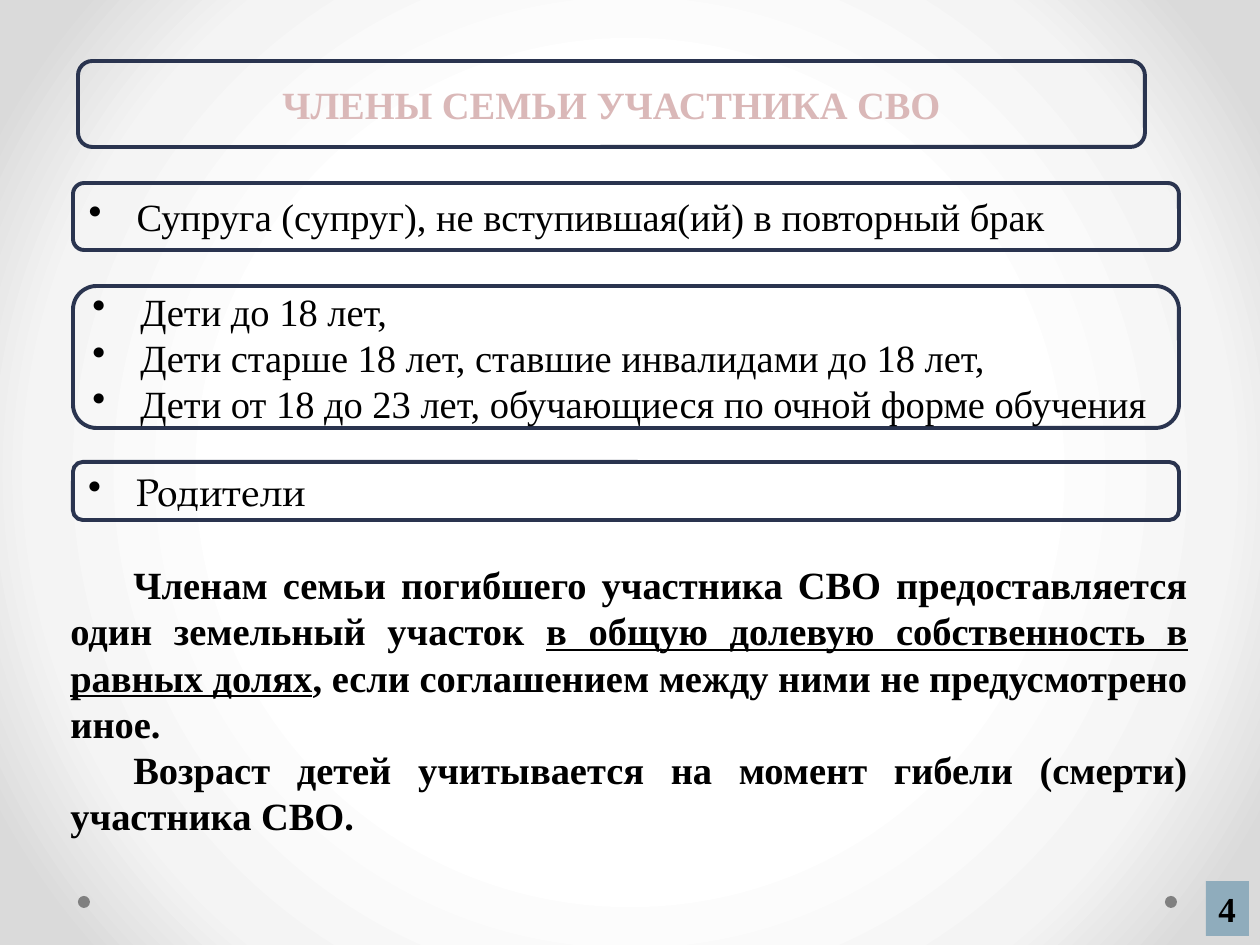
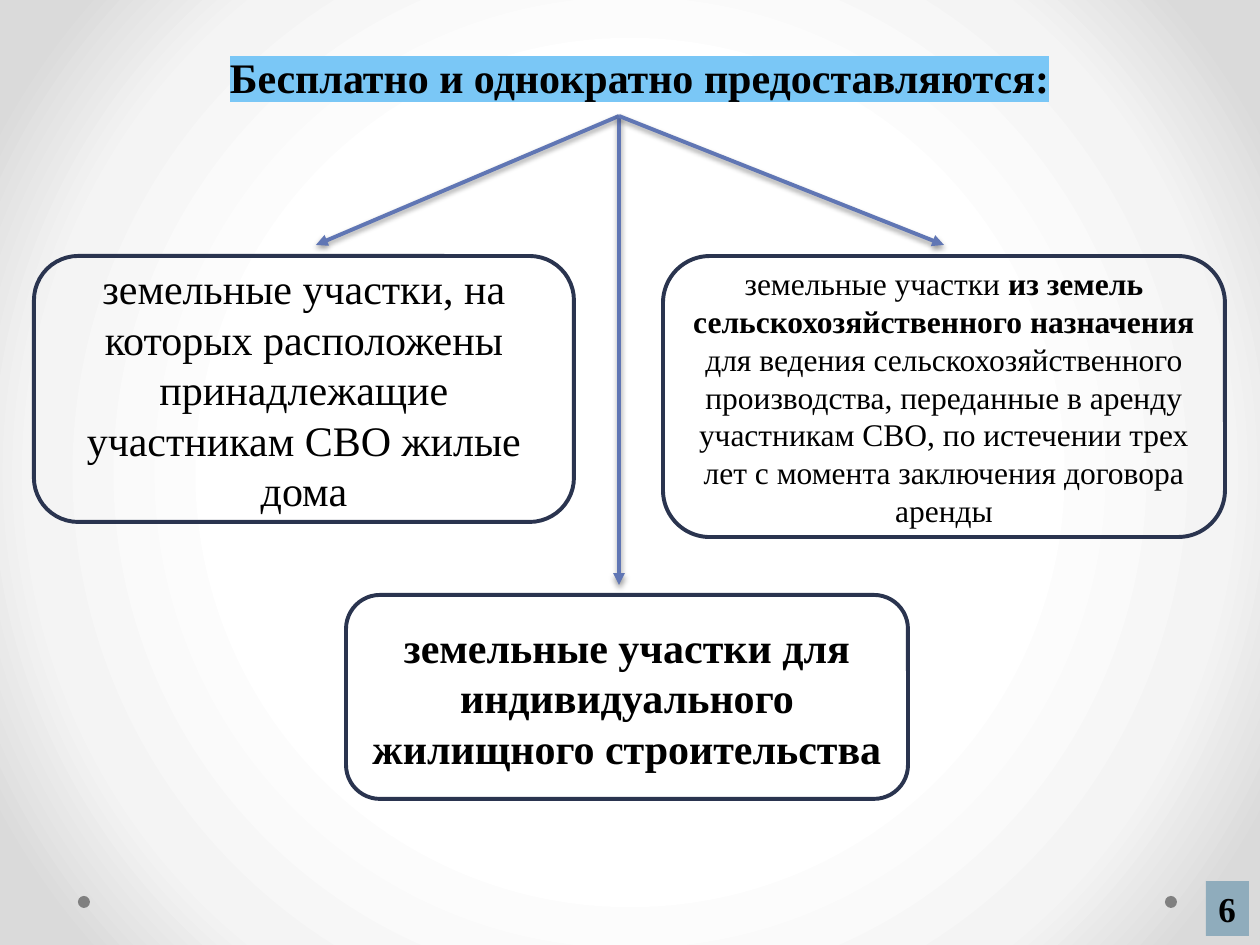
from typing import NamedTuple

from lxml.etree import SubElement
from pptx import Presentation
from pptx.dml.color import RGBColor
from pptx.enum.shapes import MSO_CONNECTOR, MSO_SHAPE
from pptx.enum.text import MSO_ANCHOR, PP_ALIGN
from pptx.oxml.ns import qn
from pptx.util import Pt

SCALE = 914400 / 126  # EMU in one px
COLORS = {
    "ink": "000000", "frame": "2A344F", "rose": "DAB8B8", "sky": "7AC7F6",
    "arrow": "6076B4", "badge": "8FACBC", "dot": "808080",
}
GLOW = ((50, "FFFFFF"), (76, "F4F4F4"), (92, "DADADA"))
SERIF = "Times New Roman"
PAGELLA = "TeX Gyre Pagella"
LEADING = 1.2
HANG = 48


class Run(NamedTuple):
    text: str
    bold: bool = False
    line: bool = False


class Area(NamedTuple):
    left: int
    top: int
    width: int
    height: int


class Card(NamedTuple):
    area: Area
    paras: list[list[Run]]
    size: int = 22
    font: str = SERIF
    color: str = "ink"
    list: bool = False


def emu(px: int) -> int:
    return round(px * SCALE)


def rgb(name: str) -> RGBColor:
    return RGBColor.from_string(COLORS[name])


def node(parent, tag: str, **attrs):
    """Append a DrawingML child element."""
    return SubElement(parent, qn(tag), {k: str(v) for k, v in attrs.items()})


def write(frame, paras: list[list[Run]], *, size: int = 22, font: str = SERIF,
          color: str = "ink", align=PP_ALIGN.LEFT, anchor=MSO_ANCHOR.TOP,
          list: bool = False, indent: int = 0, lead: float = 0,
          mark: str = "", wrap: bool = True) -> None:
    """Fill a text frame with formatted paragraphs."""
    frame.word_wrap = wrap
    frame.vertical_anchor = anchor
    for i, runs in enumerate(paras):
        para = frame.add_paragraph() if i else frame.paragraphs[0]
        para.alignment = align
        para.line_spacing = Pt(lead or size * LEADING)
        props = para._p.get_or_add_pPr()
        if list:
            props.set("marL", str(emu(HANG)))
            props.set("indent", str(-emu(HANG)))
            node(props, "a:buChar", char="•")
        elif indent:
            props.set("indent", str(emu(indent)))
        for item in runs:
            run = para.add_run()
            run.text = item.text
            face = run.font
            face.size, face.bold = Pt(size), item.bold
            if item.line:
                face.underline = True
            face.color.rgb = rgb(color)
            if mark:
                tint = node(run._r.get_or_add_rPr(), "a:highlight")
                node(tint, "a:srgbClr", val=COLORS[mark])
            face.name = font


def shape(slide, kind, area: Area, *, fill: str = "", line: str = ""):
    """Draw a preset shape with a plain fill or a plain outline."""
    item = slide.shapes.add_shape(kind, *map(emu, area))
    item.shadow.inherit = False
    if fill:
        item.fill.solid()
        item.fill.fore_color.rgb = rgb(fill)
    else:
        item.fill.background()
    if line:
        item.line.color.rgb = rgb(line)
        item.line.width = Pt(2.25)
    else:
        item.line.fill.background()
    return item


def draw(slide, card: Card) -> None:
    """Draw a rounded frame with its text."""
    box = shape(slide, MSO_SHAPE.ROUNDED_RECTANGLE, card.area, line="frame")
    write(box.text_frame, card.paras, size=card.size, font=card.font,
          color=card.color, list=card.list, anchor=MSO_ANCHOR.MIDDLE,
          align=PP_ALIGN.LEFT if card.list else PP_ALIGN.CENTER)


def label(slide, area: Area, paras: list[list[Run]], **form) -> None:
    box = slide.shapes.add_textbox(*map(emu, area))
    write(box.text_frame, paras, **form)


def arrow(slide, start: tuple[int, int], end: tuple[int, int]) -> None:
    """Draw an arrow with a soft shadow below it."""
    link = slide.shapes.add_connector(
        MSO_CONNECTOR.STRAIGHT, *map(emu, start + end))
    link.line.color.rgb = rgb("arrow")
    link.line.width = Pt(2.25)
    node(link.line._get_or_add_ln(), "a:tailEnd", type="triangle")
    effects = node(link._element.spPr, "a:effectLst")
    shade = node(effects, "a:outerShdw", blurRad=40000, dist=20000,
                 dir=5400000, rotWithShape=0)
    tone = node(shade, "a:srgbClr", val=COLORS["ink"])
    node(tone, "a:alpha", val=38000)


def start(deck):
    """Add a slide with the round glow and the two footer dots."""
    slide = deck.slides.add_slide(deck.slide_layouts[6])
    fill = slide.background.fill
    fill.gradient()
    grad = slide._element.cSld.find(".//" + qn("a:gradFill"))
    for child in [*grad]:
        grad.remove(child)
    stops = node(grad, "a:gsLst")
    for pos, tone in GLOW:
        node(node(stops, "a:gs", pos=pos * 1000), "a:srgbClr", val=tone)
    track = node(grad, "a:path", path="circle")
    node(track, "a:fillToRect", l=50000, t=50000, r=50000, b=50000)
    for left in (1165, 78):
        shape(slide, MSO_SHAPE.OVAL, Area(left, 896, 12, 12), fill="dot")
    return slide


def badge(slide, page: int) -> None:
    """Draw the page number."""
    box = shape(slide, MSO_SHAPE.RECTANGLE, Area(1206, 881, 43, 55),
                fill="badge")
    write(box.text_frame, [[Run(str(page), True)]], size=20, wrap=False)


def family(deck) -> None:
    slide = start(deck)
    # Groups of relatives
    cards = [
        Card(Area(73, 183, 1106, 67),
             [[Run("Супруга (супруг), не вступившая(ий) в повторный брак")]],
             list=True),
        Card(Area(73, 286, 1106, 142), [
            [Run("Дети до 18 лет,")],
            [Run("Дети старше 18 лет, ставшие инвалидами до 18 лет,")],
            [Run("Дети от 18 до 23 лет, обучающиеся по очной форме обучения")],
        ], list=True),
        Card(Area(73, 462, 1106, 58), [[Run("Родители")]],
             font=PAGELLA, list=True),
        Card(Area(78, 61, 1067, 86),
             [[Run("ЧЛЕНЫ СЕМЬИ УЧАСТНИКА СВО", True)]], color="rose"),
    ]
    for card in cards:
        draw(slide, card)
    # Rule for sharing the land
    label(slide, Area(58, 555, 1142, 292), [
        [Run("Членам семьи погибшего участника СВО предоставляется один "
             "земельный участок ", True),
         Run("в общую долевую собственность в равных долях", True, True),
         Run(", если соглашением между ними не предусмотрено иное.", True)],
        [Run("Возраст детей учитывается на момент гибели (смерти) "
             "участника СВО.", True)],
    ], align=PP_ALIGN.JUSTIFY, indent=63)
    badge(slide, 4)


def grants(deck) -> None:
    slide = start(deck)
    label(slide, Area(149, 43, 981, 65),
          [[Run("Бесплатно и однократно предоставляются:", True)]],
          size=24, align=PP_ALIGN.CENTER, anchor=MSO_ANCHOR.BOTTOM,
          lead=58, mark="sky")
    # Kinds of land plots
    cards = [
        Card(Area(34, 256, 540, 266),
             [[Run("земельные участки, на которых расположены "
                   "принадлежащие участникам СВО жилые дома")]], size=24),
        Card(Area(663, 256, 562, 281),
             [[Run("земельные участки "),
               Run("из земель сельскохозяйственного назначения", True),
               Run(" для ведения сельскохозяйственного производства, "
                   "переданные в аренду участникам СВО, по истечении трех "
                   "лет с момента заключения договора аренды")]], size=18),
        Card(Area(346, 595, 562, 204),
             [[Run("земельные участки для индивидуального жилищного "
                   "строительства", True)]], size=24),
    ]
    for card in cards:
        draw(slide, card)
    # Arrows from the title
    for end in ((316, 245), (619, 585), (944, 245)):
        arrow(slide, (619, 116), end)
    badge(slide, 6)


def main() -> None:
    deck = Presentation()
    deck.slide_width, deck.slide_height = emu(1260), emu(945)
    family(deck)
    grants(deck)
    deck.save("out.pptx")


if __name__ == "__main__":
    main()
